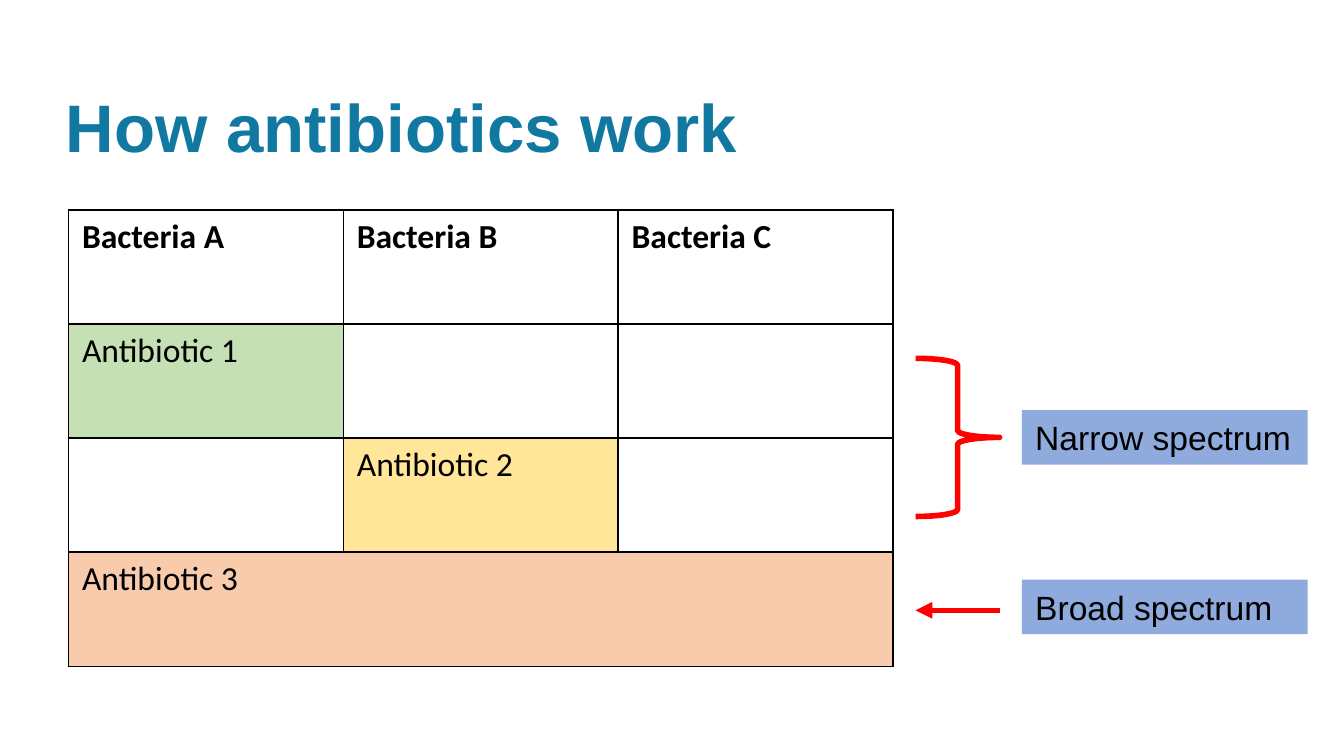
from lxml.etree import SubElement
from pptx import Presentation
from pptx.dml.color import RGBColor
from pptx.enum.shapes import MSO_CONNECTOR, MSO_SHAPE
from pptx.enum.text import MSO_ANCHOR, PP_ALIGN
from pptx.oxml.ns import qn
from pptx.util import Pt

PX = 9525
COLORS = {
    "title": "1178A2",
    "text": "000000",
    "border": "000000",
    "label": "8FAADC",
    "marker": "FF0000",
    "antibiotic 1": "C5E0B4",
    "antibiotic 2": "FFE699",
    "antibiotic 3": "F8CBAD",
}
BACTERIA = ["Bacteria A", "Bacteria B", "Bacteria C"]
ANTIBIOTICS = [("Antibiotic 1", 0, 0), ("Antibiotic 2", 1, 1), ("Antibiotic 3", 0, 2)]


def px(*lengths):
    return [length * PX for length in lengths]


def color(name):
    return RGBColor.from_string(COLORS[name])


def add_run(paragraph, text, size, font, tint="text", bold=False):
    run = paragraph.add_run()
    run.text = text
    run.font.size = Pt(size)
    run.font.name = font
    run.font.bold = bold
    run.font.color.rgb = color(tint)


def place_title(slide, left, top, width, height):
    title = slide.shapes.title
    title.left, title.top, title.width, title.height = px(left, top, width, height)
    frame = title.text_frame
    frame.word_wrap = True
    frame.vertical_anchor = MSO_ANCHOR.TOP
    frame.margin_left = frame.margin_right = 0
    heading = frame.paragraphs[0]
    heading.alignment = PP_ALIGN.LEFT
    heading.line_spacing = 0.9
    add_run(heading, "How antibiotics work", 36, "Arial", "title", True)


def border_cell(cell):
    properties = cell._tc.get_or_add_tcPr()
    for side in ("a:lnL", "a:lnR", "a:lnT", "a:lnB"):
        line = SubElement(properties, qn(side), w=str(Pt(1)))
        fill = SubElement(line, qn("a:solidFill"))
        SubElement(fill, qn("a:srgbClr"), val=COLORS["border"])


def add_spectrum_table(slide, left, top, width, height):
    rows, columns = len(ANTIBIOTICS) + 1, len(BACTERIA)
    table = slide.shapes.add_table(rows, columns, *px(left, top, width, height)).table
    table.first_row = table.horz_banding = False
    for cell in table.iter_cells():
        border_cell(cell)
        cell.fill.background()
    for column, bacterium in enumerate(BACTERIA):
        heading = table.cell(0, column).text_frame.paragraphs[0]
        add_run(heading, bacterium, 18, "Calibri", bold=True)
    for row, (antibiotic, first, last) in enumerate(ANTIBIOTICS, start=1):
        cell = table.cell(row, first)
        if last > first:
            cell.merge(table.cell(row, last))
        cell.fill.solid()
        cell.fill.fore_color.rgb = color(antibiotic.lower())
        add_run(cell.text_frame.paragraphs[0], antibiotic, 18, "Calibri")


def add_label(slide, text, left, top, width, height):
    label = slide.shapes.add_shape(MSO_SHAPE.RECTANGLE, *px(left, top, width, height))
    label.shadow.inherit = False
    label.fill.solid()
    label.fill.fore_color.rgb = color("label")
    label.line.fill.background()
    label.text_frame.word_wrap = True
    paragraph = label.text_frame.paragraphs[0]
    paragraph.alignment = PP_ALIGN.LEFT
    add_run(paragraph, text, 18, "Arial")


def mark_line(line):
    line.color.rgb = color("marker")
    line.width = Pt(3)


def add_spectrum_key(slide, left, top, width, height):
    marker_width, label_width, label_height = 60, 204, 39
    label_left = left + width - label_width
    brace_height = 113

    brace = slide.shapes.add_shape(
        MSO_SHAPE.RIGHT_BRACE, *px(left, top, marker_width, brace_height))
    brace.shadow.inherit = False
    brace.fill.background()
    mark_line(brace.line)
    narrow_top = top + (brace_height - label_height) // 2
    add_label(slide, "Narrow spectrum", label_left, narrow_top, label_width, label_height)

    broad_top = top + height - label_height
    arrow_y = broad_top + 22
    arrow = slide.shapes.add_connector(
        MSO_CONNECTOR.STRAIGHT, *px(left + marker_width, arrow_y, left, arrow_y))
    mark_line(arrow.line)
    SubElement(arrow.line._get_or_add_ln(), qn("a:tailEnd"), type="triangle")
    SubElement(arrow._element.spPr, qn("a:effectLst"))
    add_label(slide, "Broad spectrum", label_left, broad_top, label_width, label_height)


def main():
    presentation = Presentation()
    presentation.slide_width, presentation.slide_height = px(960, 540)
    slide = presentation.slides.add_slide(presentation.slide_layouts[5])
    place_title(slide, 47, 63, 574, 105)
    add_spectrum_table(slide, 49, 150, 589, 326)
    add_spectrum_key(slide, 654, 256, 280, 197)
    presentation.save("out.pptx")


if __name__ == "__main__":
    main()
